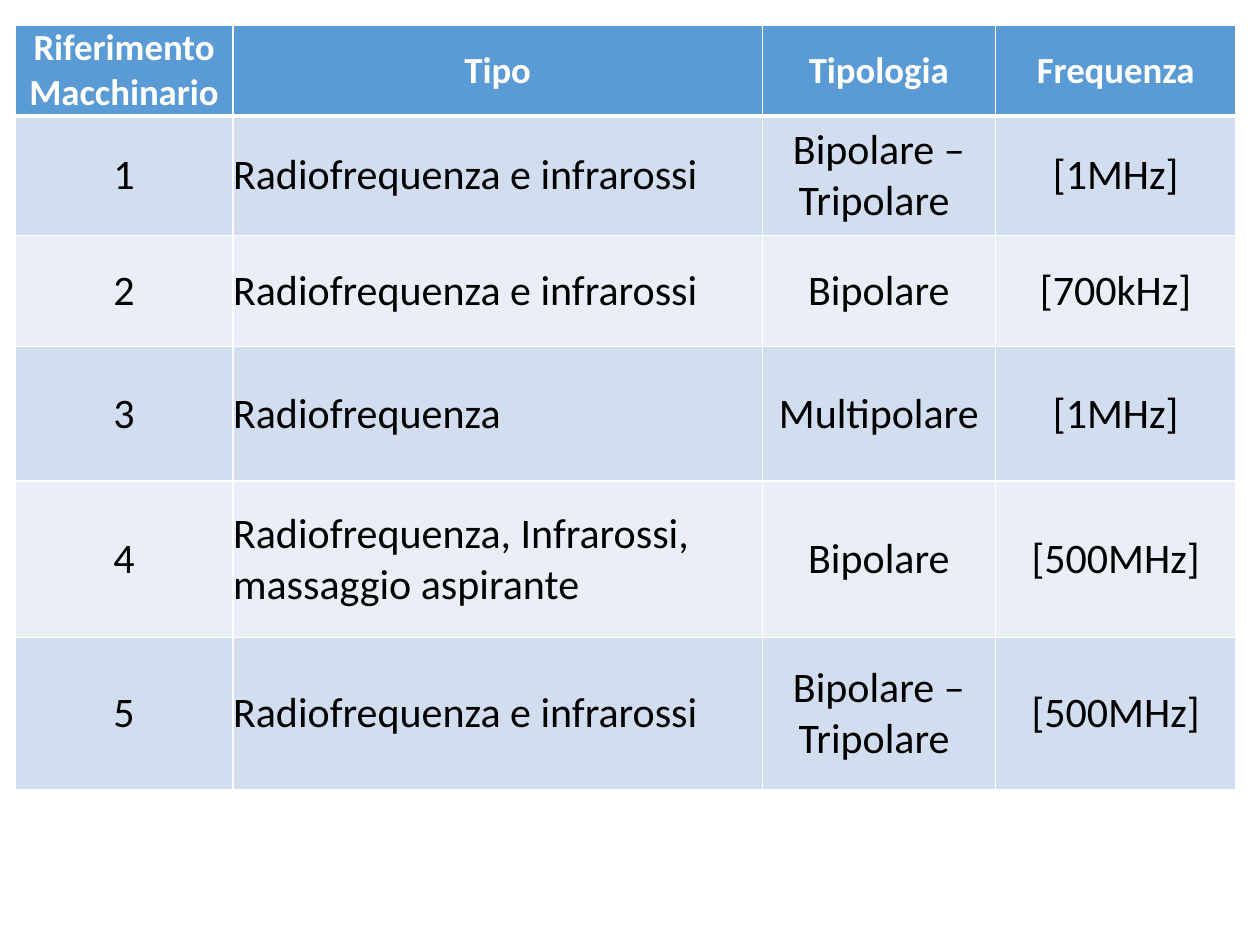
from lxml import etree
from pptx import Presentation
from pptx import util as u
from pptx.dml.color import RGBColor
from pptx.enum import text
from pptx.oxml import ns

HEADINGS = ["Riferimento Macchinario", "Tipo", "Tipologia", "Frequenza"]
MACHINES = [
    ["1", "Radiofrequenza e infrarossi", "Bipolare – Tripolare ", "[1MHz]"],
    ["2", "Radiofrequenza e infrarossi", "Bipolare", "[700kHz]"],
    ["3", "Radiofrequenza", "Multipolare", "[1MHz]"],
    ["4", "Radiofrequenza, Infrarossi, massaggio aspirante", "Bipolare", "[500MHz]"],
    ["5", "Radiofrequenza e infrarossi", "Bipolare – Tripolare ", "[500MHz]"],
]
COLUMN_WIDTHS = [1.73, 4.2, 1.85, 1.91]
ROW_HEIGHTS = [0.72, 0.95, 0.88, 1.07, 1.24, 1.21]
LEFT, TOP = 0.12, 0.2
HEADER_FILL = "5B9BD5"
BAND_FILLS = ["D2DEEF", "EAEFF7"]
WHITE, BLACK = "FFFFFF", "000000"


def color(value):
    return RGBColor.from_string(value)


def add_borders(cell, **widths):
    properties = cell._tc.get_or_add_tcPr()
    for side, width in widths.items():
        line = etree.SubElement(properties, ns.qn(f"a:ln{side}"), w=str(u.Pt(width)))
        fill = etree.SubElement(line, ns.qn("a:solidFill"))
        etree.SubElement(fill, ns.qn("a:srgbClr"), val=WHITE)


def write(cell, words, size=24, ink=BLACK, bold=False, align=text.PP_ALIGN.CENTER):
    para = cell.text_frame.paragraphs[0]
    para.alignment = align
    span = para.add_run()
    span.text = words
    span.font.name = "Calibri"
    span.font.size = u.Pt(size)
    span.font.bold = bold
    span.font.color.rgb = color(ink)


deck = Presentation()
deck.slide_width, deck.slide_height = u.Inches(10), u.Inches(7.5)
page = deck.slides.add_slide(deck.slide_layouts[6])

rows = [HEADINGS] + MACHINES
table = page.shapes.add_table(
    len(rows), len(HEADINGS), u.Inches(LEFT), u.Inches(TOP),
    u.Inches(sum(COLUMN_WIDTHS)), u.Inches(sum(ROW_HEIGHTS)),
).table
for column, width in zip(table.columns, COLUMN_WIDTHS):
    column.width = u.Inches(width)
for row, height in zip(table.rows, ROW_HEIGHTS):
    row.height = u.Inches(height)

for row_index, values in enumerate(rows):
    header = row_index == 0
    for column_index, words in enumerate(values):
        cell = table.cell(row_index, column_index)
        cell.margin_left = cell.margin_right = cell.margin_top = cell.margin_bottom = 0
        cell.vertical_anchor = text.MSO_ANCHOR.MIDDLE
        add_borders(cell, L=1, R=1, T=3 if row_index == 1 else 1, B=3 if header else 1)
        cell.fill.solid()
        cell.fill.fore_color.rgb = color(
            HEADER_FILL if header else BAND_FILLS[(row_index - 1) % 2])
        if header:
            write(cell, words, size=21, ink=WHITE, bold=True)
        elif column_index == 1:
            write(cell, words, align=text.PP_ALIGN.LEFT)
        else:
            write(cell, words)

deck.save("out.pptx")
